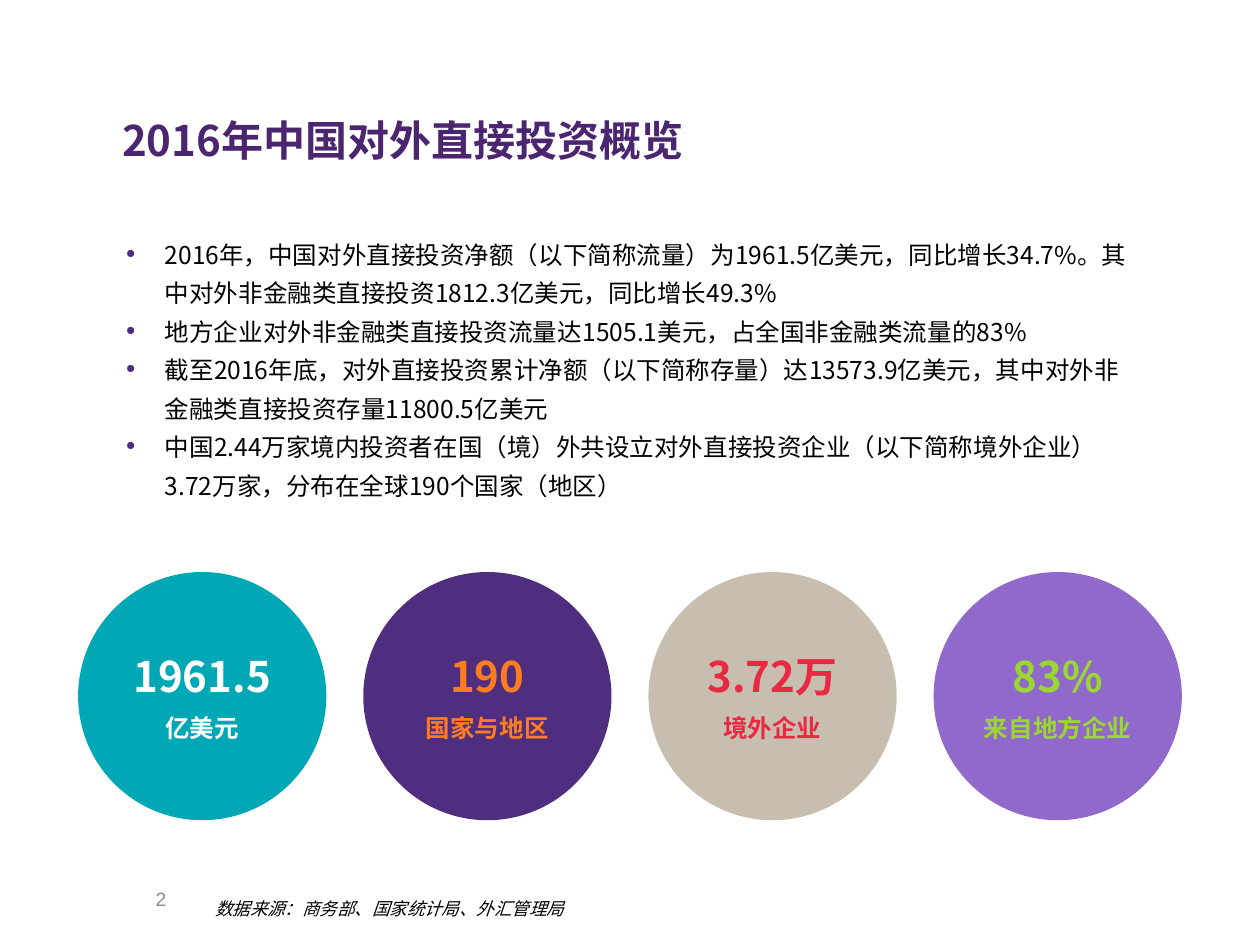
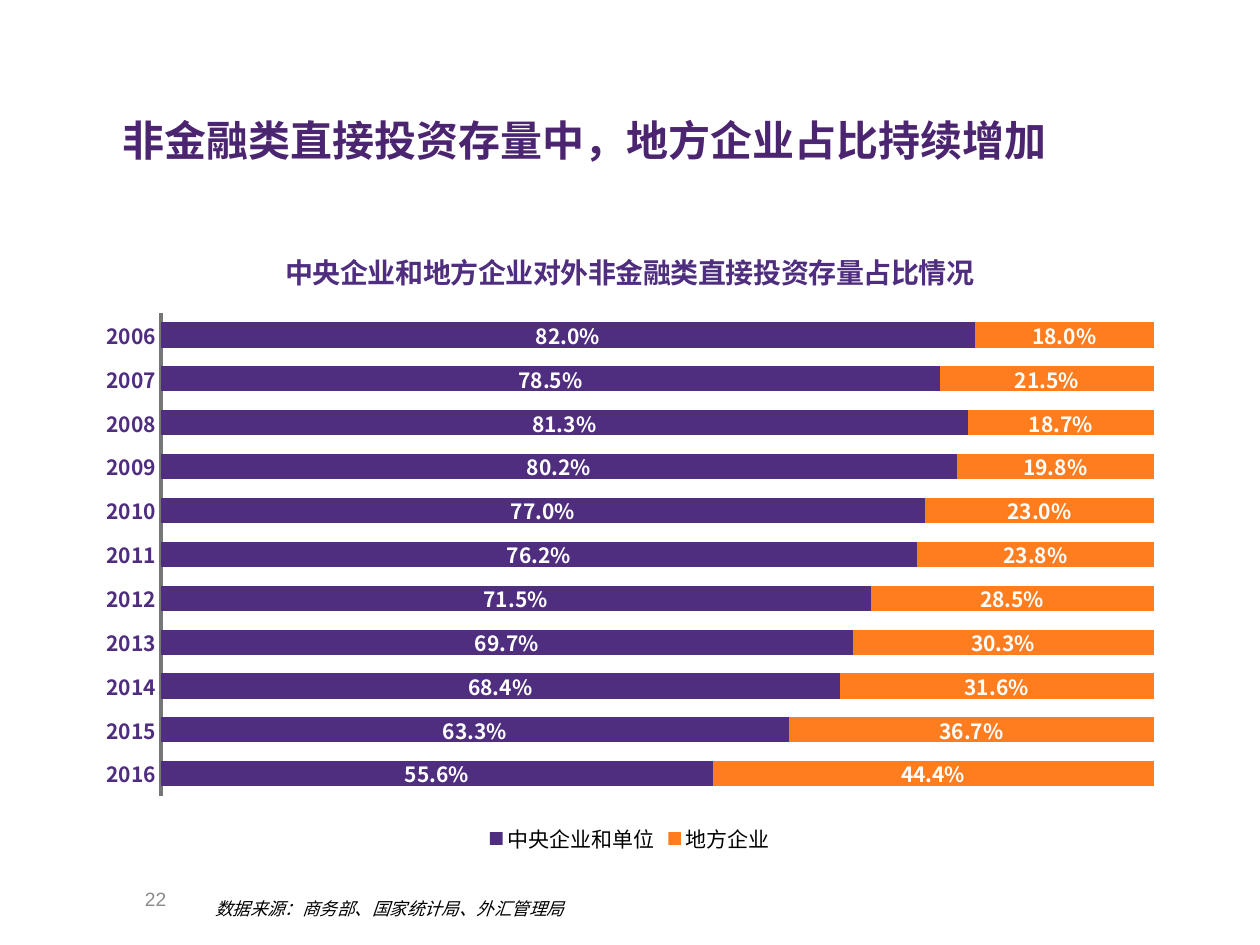
from dataclasses import dataclass
from lxml.etree import SubElement
from pptx import Presentation
from pptx.chart.data import CategoryChartData
from pptx.dml.color import RGBColor
from pptx.enum.chart import XL_CHART_TYPE as ChartType, XL_LEGEND_POSITION as LegendPosition
from pptx.enum.chart import XL_LABEL_POSITION as LabelPosition, XL_TICK_MARK as TickMark
from pptx.enum.shapes import MSO_SHAPE as Shape
from pptx.enum.text import MSO_ANCHOR as Anchor, PP_ALIGN as Align
from pptx.oxml import parse_xml
from pptx.oxml.ns import nsdecls, qn
from pptx.util import Inches, Pt

# Content
SOURCE = "数据来源：商务部、国家统计局、外汇管理局"
OVERVIEW = {
    "title": "2016年中国对外直接投资概览",
    "number": "2",
    "bullets": [
        "2016年，中国对外直接投资净额（以下简称流量）为1961.5亿美元，同比增长34.7%。"
        "其中对外非金融类直接投资1812.3亿美元，同比增长49.3%",
        "地方企业对外非金融类直接投资流量达1505.1美元，占全国非金融类流量的83%",
        "截至2016年底，对外直接投资累计净额（以下简称存量）达13573.9亿美元，"
        "其中对外非金融类直接投资存量11800.5亿美元",
        "中国2.44万家境内投资者在国（境）外共设立对外直接投资企业（以下简称境外企业）"
        "3.72万家，分布在全球190个国家（地区）",
    ],
    # figure, caption, circle colour, text colour
    "circles": [
        ("1961.5", "亿美元", "00A7B5", "FFFFFF"),
        ("190", "国家与地区", "4F2D7F", "FF7D1E"),
        ("3.72万", "境外企业", "C8BEAF", "E92841"),
        ("83%", "来自地方企业", "9169CA", "9BD732"),
    ],
}
SHARES = {
    "title": "非金融类直接投资存量中，地方企业占比持续增加",
    "number": "22",
    "chart_title": "中央企业和地方企业对外非金融类直接投资存量占比情况",
    "years": [str(year) for year in range(2006, 2017)],
    "series": [
        ("中央企业和单位", "4F2D7F",
         [0.82, 0.785, 0.813, 0.802, 0.77, 0.762, 0.715, 0.697, 0.684, 0.633, 0.556]),
        ("地方企业", "FF7D1E",
         [0.18, 0.215, 0.187, 0.198, 0.23, 0.238, 0.285, 0.303, 0.316, 0.367, 0.444]),
    ],
}


@dataclass(frozen=True)
class Theme:
    font: str = "Noto Sans CJK SC"
    number_font: str = "Arial"
    title: str = "4C2570"
    purple: str = "4F2D7F"
    text: str = "000000"
    white: str = "FFFFFF"
    grey: str = "8C8C8C"
    axis: str = "747678"
    title_size: int = 24
    chart_title_size: int = 16
    body_size: int = 14
    chart_size: int = 12
    number_size: int = 11
    source_size: int = 10


THEME = Theme()
WIDTH, HEIGHT = 10, 7.5
EDGE, CIRCLE_TOP, DIAMETER = 0.62, 4.54, 1.97
INDENT = 0.31
TIGHT, NORMAL = (0.09, 0.04), (0.1, 0.05)


# Shared helpers
def style(font, size, color, bold=False, italic=False, name=THEME.font):
    font.size, font.bold, font.italic, font.name = Pt(size), bold, italic, name
    font.color.rgb = RGBColor.from_string(color)
    latin = font._element.find(qn("a:latin"))
    latin.addnext(parse_xml(f'<a:ea {nsdecls("a")} typeface="{name}"/>'))


def add_text(page, at, lines, margins=NORMAL):
    box = page.shapes.add_textbox(*map(Inches, at))
    frame = box.text_frame
    frame.word_wrap = True
    frame.margin_left = frame.margin_right = Inches(margins[0])
    frame.margin_top = frame.margin_bottom = Inches(margins[1])
    frame.text = "\n".join(lines)
    return frame


def add_page(deck, content):
    page = deck.slides.add_slide(deck.slide_layouts[6])
    title = add_text(page, (0.88, 0.87, 8.58, 0.62), [content["title"]], TIGHT)
    style(title.paragraphs[0].font, THEME.title_size, THEME.title, bold=True)
    number = add_text(page, (0.86, 6.93, 0.55, 0.4), [content["number"]], TIGHT)
    number.vertical_anchor = Anchor.MIDDLE
    number.paragraphs[0].alignment = Align.RIGHT
    style(number.paragraphs[0].font, THEME.number_size, THEME.grey, name=THEME.number_font)
    source = add_text(page, (1.61, 7.08, 3.88, 0.27), [SOURCE])
    style(source.paragraphs[0].font, THEME.source_size, THEME.text, italic=True)
    return page


# Overview: bullets and key figures
def add_bullet(para):
    props = para._p.get_or_add_pPr()
    props.set("marL", str(Inches(INDENT)))
    props.set("indent", str(-Inches(INDENT)))
    color = SubElement(props, qn("a:buClr"))
    SubElement(color, qn("a:srgbClr"), val=THEME.purple)
    SubElement(props, qn("a:buSzPct"), val="50000")
    SubElement(props, qn("a:buChar"), char="●")


def add_circle(page, left, figure, caption, fill, color):
    circle = page.shapes.add_shape(
        Shape.OVAL, *map(Inches, (left, CIRCLE_TOP, DIAMETER, DIAMETER)))
    circle.shadow.inherit = False
    circle.fill.solid()
    circle.fill.fore_color.rgb = RGBColor.from_string(fill)
    circle.line.fill.background()
    frame = circle.text_frame
    frame.vertical_anchor = Anchor.MIDDLE
    frame.text = f"{figure}\n{caption}"
    for para, size in zip(frame.paragraphs, (THEME.title_size, THEME.body_size)):
        para.alignment = Align.CENTER
        style(para.font, size, color, bold=True)
    frame.paragraphs[1].space_before = Pt(7)


def build_overview(deck):
    page = add_page(deck, OVERVIEW)
    for para in add_text(page, (0.9, 1.78, 8.19, 2.28), OVERVIEW["bullets"]).paragraphs:
        add_bullet(para)
        para.line_spacing = Pt(22)
        style(para.font, THEME.body_size, THEME.text)
    circles = OVERVIEW["circles"]
    step = (WIDTH - 2 * EDGE - DIAMETER) / (len(circles) - 1)
    for column, circle in enumerate(circles):
        add_circle(page, EDGE + column * step, *circle)


# Shares: stacked bars by year
def place_plot(chart, **shares):
    area = chart.element.chart.plotArea
    for layout in area.findall(qn("c:layout")):
        area.remove(layout)
    parts = "".join(f'<c:{key} val="{value}"/>' for key, value in shares.items())
    area.insert(0, parse_xml(
        f'<c:layout {nsdecls("c")}><c:manualLayout><c:layoutTarget val="inner"/>'
        f'<c:xMode val="edge"/><c:yMode val="edge"/>{parts}</c:manualLayout></c:layout>'))


def build_shares(deck):
    page = add_page(deck, SHARES)
    data = CategoryChartData(number_format="0.0%")
    data.categories = SHARES["years"]
    for name, _, values in SHARES["series"]:
        data.add_series(name, values)
    chart = page.shapes.add_chart(
        ChartType.BAR_STACKED_100, *map(Inches, (0.67, 1.78, 8.66, 5.04)), data).chart
    style(chart.font, THEME.chart_size, THEME.text)
    chart.has_title = True
    heading = chart.chart_title.text_frame
    heading.text = SHARES["chart_title"]
    style(heading.paragraphs[0].runs[0].font, THEME.chart_title_size, THEME.purple, bold=True)
    chart.has_legend = True
    chart.legend.position = LegendPosition.BOTTOM
    chart.legend.include_in_layout = False
    style(chart.legend.font, THEME.chart_size, THEME.text)

    years = chart.category_axis
    years.reverse_order = True
    years.major_tick_mark = TickMark.NONE
    years.has_major_gridlines = False
    years.format.line.width = Pt(2.25)
    years.format.line.color.rgb = RGBColor.from_string(THEME.axis)
    style(years.tick_labels.font, THEME.chart_size, THEME.purple, bold=True)
    chart.value_axis.has_major_gridlines = False
    chart.value_axis.visible = False

    plot = chart.plots[0]
    plot.gap_width, plot.overlap = 75, 100
    plot.vary_by_categories = False
    for series, (_, color, _) in zip(plot.series, SHARES["series"]):
        series.format.fill.solid()
        series.format.fill.fore_color.rgb = RGBColor.from_string(color)
        labels = series.data_labels
        labels.show_value = True
        labels.number_format, labels.number_format_is_linked = "0.0%", False
        labels.position = LabelPosition.CENTER
        style(labels.font, THEME.chart_size, THEME.white, bold=True)
    place_plot(chart, x=0.07, y=0.14, w=0.91, h=0.76)


def main():
    deck = Presentation()
    deck.slide_width, deck.slide_height = Inches(WIDTH), Inches(HEIGHT)
    build_overview(deck)
    build_shares(deck)
    deck.save("out.pptx")


if __name__ == "__main__":
    main()
